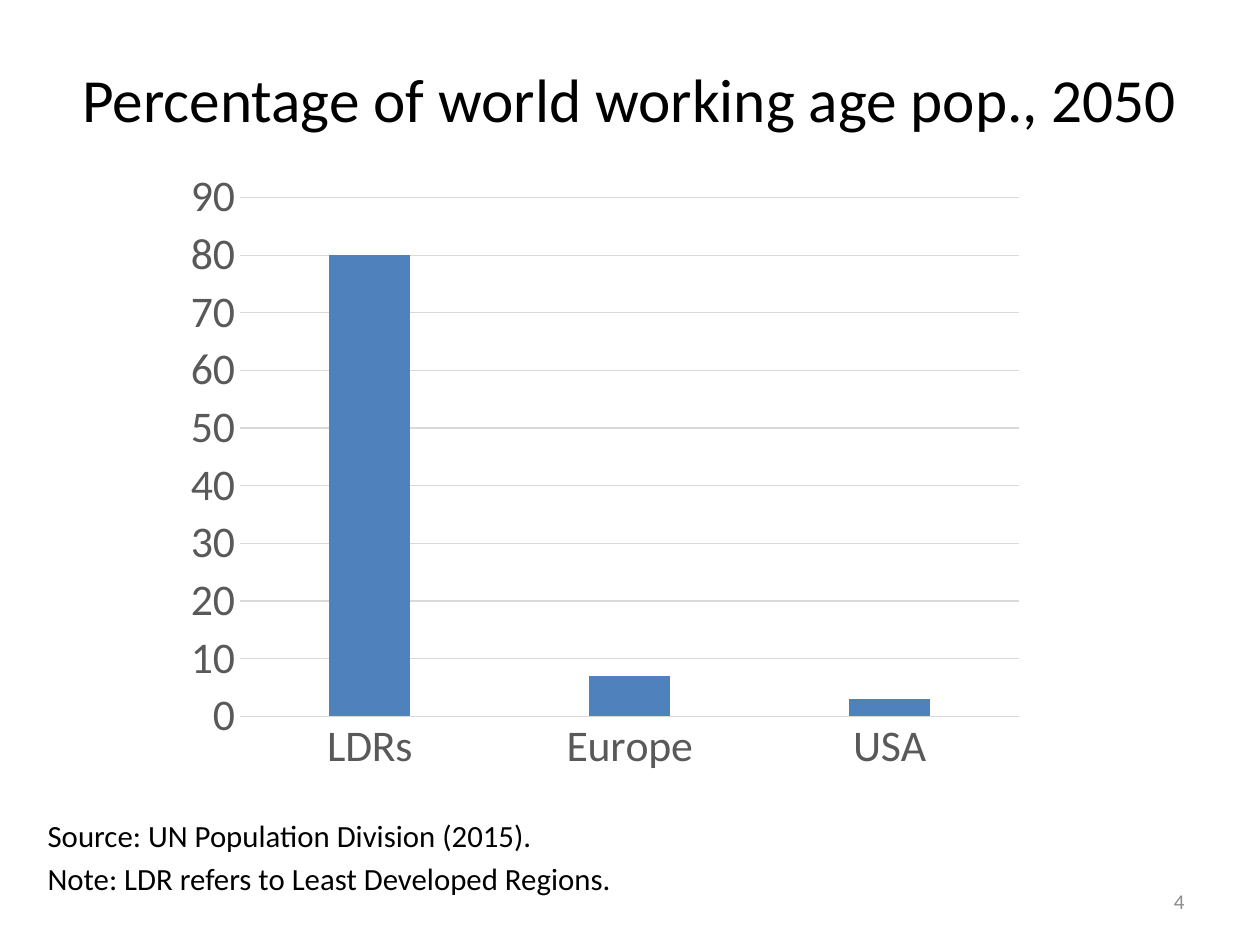
"""Build a slide with a column chart of world working age population in 2050."""
from pptx import Presentation
from pptx.chart.data import CategoryChartData
from pptx.dml.color import RGBColor
from pptx.enum.chart import XL_CHART_TYPE, XL_TICK_MARK
from pptx.enum.text import MSO_ANCHOR, PP_ALIGN
from pptx.util import Cm, Pt

BLACK = RGBColor(0x00, 0x00, 0x00)
BLUE = RGBColor(0x4F, 0x81, 0xBD)
DARK = RGBColor(0x59, 0x59, 0x59)
GRAY = RGBColor(0x8C, 0x8C, 0x8C)
PALE = RGBColor(0xD9, 0xD9, 0xD9)
FACE = "Calibri"

deck = Presentation()
deck.slide_width, deck.slide_height = Cm(25.4), Cm(19.05)
slide = deck.slides.add_slide(deck.slide_layouts[6])


def add_text(text, box, size, color=BLACK, align=PP_ALIGN.LEFT,
             anchor=MSO_ANCHOR.MIDDLE, before=0):
    frame = slide.shapes.add_textbox(*[Cm(n) for n in box]).text_frame
    frame.word_wrap = True
    frame.vertical_anchor = anchor
    frame.text = text
    for para in frame.paragraphs:
        para.alignment = align
        para.space_before = Pt(before)
        para.font.name = FACE
        para.font.size = Pt(size)
        para.font.color.rgb = color


add_text("Percentage of world working age pop., 2050",
         (1.27, 0.38, 22.86, 3.18), size=35, align=PP_ALIGN.CENTER)
add_text("Source: UN Population Division (2015).\n"
         "Note: LDR refers to Least Developed Regions.",
         (0.71, 16.33, 23.42, 1.75), size=17.6, anchor=MSO_ANCHOR.TOP, before=3.5)
add_text("4", (18.21, 17.65, 5.92, 1.02), size=12, color=GRAY, align=PP_ALIGN.RIGHT)

data = CategoryChartData()
data.categories = ["LDRs", "Europe", "USA"]
data.add_series("Series 1", (80, 7, 3))
chart = slide.shapes.add_chart(XL_CHART_TYPE.COLUMN_CLUSTERED, Cm(3.5), Cm(3.2),
                               Cm(17.4), Cm(12.65), data).chart
chart.has_legend = False
chart.has_title = False
chart.font.name = FACE
chart.font.size = Pt(25)
chart.font.color.rgb = BLACK

plot = chart.plots[0]
plot.gap_width = 219
plot.overlap = -27
plot.vary_by_categories = False
fill = plot.series[0].format.fill
fill.solid()
fill.fore_color.rgb = BLUE

cats, vals = chart.category_axis, chart.value_axis
for axis in (cats, vals):
    axis.major_tick_mark = axis.minor_tick_mark = XL_TICK_MARK.NONE
    font = axis.tick_labels.font
    font.name = FACE
    font.size = Pt(25)
    font.color.rgb = DARK

vals.minimum_scale, vals.maximum_scale, vals.major_unit = 0, 90, 10
vals.has_major_gridlines = True
vals.format.line.fill.background()
for line in (cats.format.line, vals.major_gridlines.format.line):
    line.color.rgb = PALE
    line.width = Pt(0.75)

deck.save("out.pptx")
